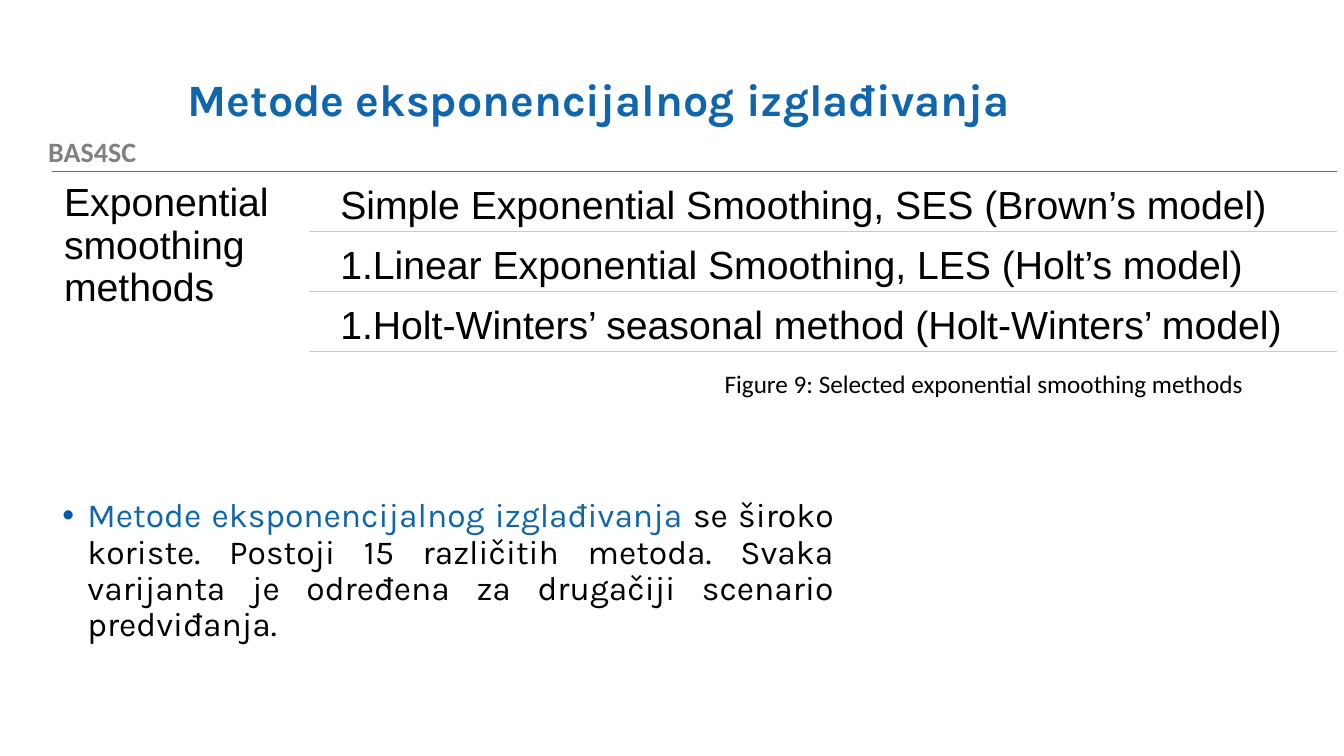
from pptx import Presentation
from pptx.dml.color import RGBColor
from pptx.enum.shapes import MSO_CONNECTOR
from pptx.enum.text import MSO_ANCHOR, PP_ALIGN
from pptx.oxml.ns import qn
from pptx.util import Pt

STRAIGHT = MSO_CONNECTOR.STRAIGHT
TOP, MIDDLE = MSO_ANCHOR.TOP, MSO_ANCHOR.MIDDLE
LEFT, CENTER, JUSTIFY = PP_ALIGN.LEFT, PP_ALIGN.CENTER, PP_ALIGN.JUSTIFY

# Content
TITLE = "Metode eksponencijalnog izglađivanja"
COURSE = "BAS4SC"
TOPIC = "Exponential smoothing methods"
METHODS = [  # text, numbered
    ("Simple Exponential Smoothing, SES (Brown’s model)", False),
    ("Linear Exponential Smoothing, LES (Holt’s model)", True),
    ("Holt-Winters’ seasonal method (Holt-Winters’ model)", True),
]
CAPTION = "Figure 9: Selected exponential smoothing methods"
SUMMARY = [
    ("Metode eksponencijalnog izglađivanja ", "1065AB"),
    ("se široko koriste. Postoji 15 različitih metoda. Svaka varijanta je "
     "određena za drugačiji scenario predviđanja.", "000000"),
]

# Layout of the method list
LIST_LEFT, LIST_TOP, LIST_RIGHT = 37.4, 122.4, 954.7
RULE_LEFT, METHOD_LEFT = 221, 234.7
ROW_HEIGHT, ROW_PITCH = 41, 42.9
LIST_INSET = 8.4


def color(hex_value):
    return RGBColor.from_string(hex_value)


def write(frame, runs, font, size, bold=False, align=LEFT, spacing=1.0,
          anchor=TOP, inset=None):
    frame.word_wrap = True
    frame.vertical_anchor = anchor
    if inset is not None:
        frame.margin_left = frame.margin_right = Pt(inset)
        frame.margin_top = frame.margin_bottom = Pt(inset)
    paragraph = frame.paragraphs[0]
    paragraph.alignment = align
    paragraph.line_spacing = spacing
    paragraph.space_before = Pt(0)
    for text, hex_value in runs:
        run = paragraph.add_run()
        run.text = text
        run.font.name, run.font.size, run.font.bold = font, Pt(size), bold
        run.font.color.rgb = color(hex_value)
    return paragraph


def add_text(slide, box, runs, font, size, **style):
    frame = slide.shapes.add_textbox(*map(Pt, box)).text_frame
    return write(frame, runs, font, size, **style)


def add_rule(slide, left, y, hex_value):
    rule = slide.shapes.add_connector(
        STRAIGHT, Pt(left), Pt(y), Pt(LIST_RIGHT), Pt(y))
    rule.line.color.rgb = color(hex_value)
    rule.line.width = Pt(1)
    properties = rule._element.spPr
    properties.append(properties.makeelement(qn("a:effectLst"), {}))


def add_mark(paragraph, tag, indent=0, hex_value=None, **attributes):
    properties = paragraph._p.get_or_add_pPr()
    properties.set("marL", str(Pt(indent)))
    properties.set("indent", str(-Pt(indent)))
    if hex_value:
        mark_color = properties.makeelement(qn("a:buClr"), {})
        mark_color.append(mark_color.makeelement(qn("a:srgbClr"), {"val": hex_value}))
        properties.append(mark_color)
    if tag == "a:buChar":
        properties.append(properties.makeelement(qn("a:buFont"), {"typeface": "Arial"}))
    properties.append(properties.makeelement(qn(tag), attributes))


def main():
    deck = Presentation()
    deck.slide_width, deck.slide_height = Pt(960), Pt(540)
    slide = deck.slides.add_slide(deck.slide_layouts[5])

    # Title and course label
    title = slide.shapes.title
    title.left, title.top, title.width, title.height = map(Pt, (126.7, 28.8, 767.5, 87.8))
    write(title.text_frame, [(TITLE, "1065AB")], "Karla", 32, bold=True,
          spacing=0.9, anchor=MIDDLE)
    add_text(slide, (0, 92.2, 131.8, 31.7), [(COURSE, "808080")], "Calibri", 20,
             bold=True, align=CENTER)

    # Summary
    summary = add_text(slide, (37.4, 352.8, 565.2, 158.4), SUMMARY, "Karla", 24,
                       align=JUSTIFY, spacing=0.9)
    add_mark(summary, "a:buChar", indent=18, hex_value="015BA6", char="•")

    # Topic and its methods
    list_style = {"spacing": 0.9, "inset": LIST_INSET}
    add_rule(slide, LIST_LEFT, LIST_TOP, "4472C4")
    add_text(slide, (LIST_LEFT, LIST_TOP, RULE_LEFT - LIST_LEFT, 130.3),
             [(TOPIC, "000000")], "Arial", 28, **list_style)
    for row, (method, numbered) in enumerate(METHODS):
        top = LIST_TOP + 1.8 + row * ROW_PITCH
        paragraph = add_text(slide, (METHOD_LEFT, top, 720, ROW_HEIGHT),
                             [(method, "000000")], "Arial", 28, **list_style)
        if numbered:
            add_mark(paragraph, "a:buAutoNum", type="arabicPeriod")
        add_rule(slide, RULE_LEFT, top + ROW_HEIGHT, "C1C9E4")

    # Caption
    add_text(slide, (510.5, 259.9, 457.2, 28.8), [(CAPTION, "000000")], "Calibri", 18)

    deck.save("out.pptx")


if __name__ == "__main__":
    main()
